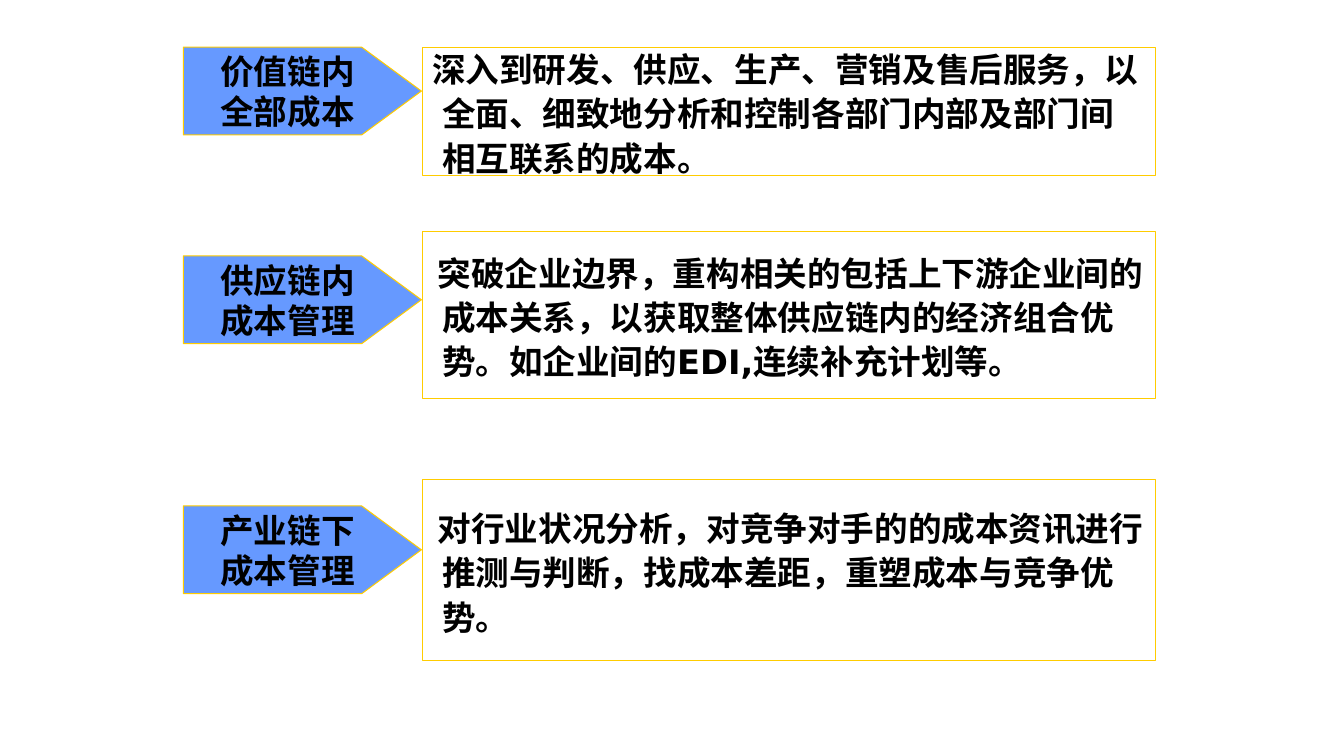
"""Build a slide of three cost-management levels, each an arrow label with its description."""
from dataclasses import dataclass

from pptx import Presentation
from pptx.dml.color import RGBColor
from pptx.enum.shapes import MSO_SHAPE
from pptx.enum.text import MSO_ANCHOR, PP_ALIGN
from pptx.shapes.autoshape import Shape
from pptx.slide import Slide
from pptx.util import Cm, Pt

PENTAGON = MSO_SHAPE.PENTAGON
RECTANGLE = MSO_SHAPE.RECTANGLE
MIDDLE = MSO_ANCHOR.MIDDLE
CENTER = PP_ALIGN.CENTER
LEFT = PP_ALIGN.LEFT

COLORS = {"arrow": "6699FF", "outline": "FFCC00", "text": "000000"}
ARROW_LEFT, ARROW_WIDTH, ARROW_HEIGHT = 4.62, 6.0, 2.21
BOX_LEFT, BOX_WIDTH = 10.64, 18.49
HANGING = 0.25


@dataclass
class Level:
    label: tuple[str, str]
    description: str
    arrow_top: float
    box_top: float
    box_height: float
    first_indent: float


LEVELS = [
    Level(("价值链内", "全部成本"),
          "深入到研发、供应、生产、营销及售后服务，以全面、细致地分析和控制各部门内部及部门间相互联系的成本。",
          1.19, 1.19, 3.23, -0.25),
    Level(("供应链内", "成本管理"),
          "突破企业边界，重构相关的包括上下游企业间的成本关系，以获取整体供应链内的经济组合优势。如企业间的EDI,连续补充计划等。",
          6.45, 5.83, 4.22, -0.11),
    Level(("产业链下", "成本管理"),
          "对行业状况分析，对竞争对手的的成本资讯进行推测与判断，找成本差距，重塑成本与竞争优势。",
          12.75, 12.09, 4.56, -0.11),
]


def add_outlined(page: Slide, kind: MSO_SHAPE, left: float, top: float,
                 width: float, height: float) -> Shape:
    shape = page.shapes.add_shape(kind, Cm(left), Cm(top), Cm(width), Cm(height))
    shape.shadow.inherit = False
    shape.line.color.rgb = RGBColor.from_string(COLORS["outline"])
    shape.line.width = Pt(0.75)
    shape.text_frame.vertical_anchor = MIDDLE
    return shape


def write(shape: Shape, lines: tuple[str, ...], font_name: str, alignment: PP_ALIGN) -> None:
    formats = {"name": font_name, "size": Pt(24), "bold": True}
    frame = shape.text_frame
    frame.text = "\n".join(lines)
    for para in frame.paragraphs:
        para.alignment = alignment
        for span in para.runs:
            for key, value in formats.items():
                setattr(span.font, key, value)
            span.font.color.rgb = RGBColor.from_string(COLORS["text"])


def add_arrow(page: Slide, level: Level) -> None:
    arrow = add_outlined(page, PENTAGON, ARROW_LEFT, level.arrow_top, ARROW_WIDTH, ARROW_HEIGHT)
    arrow.adjustments[0] = 0.68
    arrow.fill.solid()
    arrow.fill.fore_color.rgb = RGBColor.from_string(COLORS["arrow"])
    arrow.text_frame.word_wrap = False
    write(arrow, level.label, "Times New Roman", CENTER)


def add_description(page: Slide, level: Level) -> None:
    box = add_outlined(page, RECTANGLE, BOX_LEFT, level.box_top, BOX_WIDTH, level.box_height)
    box.fill.background()
    box.text_frame.word_wrap = True
    write(box, (level.description,), "DejaVu Sans", LEFT)
    para = box.text_frame.paragraphs[0]
    para.line_spacing = 1.1
    properties = para._p.get_or_add_pPr()
    properties.set("marL", str(Cm(HANGING)))
    properties.set("indent", str(Cm(level.first_indent)))


def main() -> None:
    deck = Presentation()
    deck.slide_width, deck.slide_height = Cm(33.87), Cm(19.05)
    page = deck.slides.add_slide(deck.slide_layouts[6])
    for level in LEVELS:
        add_arrow(page, level)
        add_description(page, level)
    deck.save("out.pptx")


if __name__ == "__main__":
    main()
